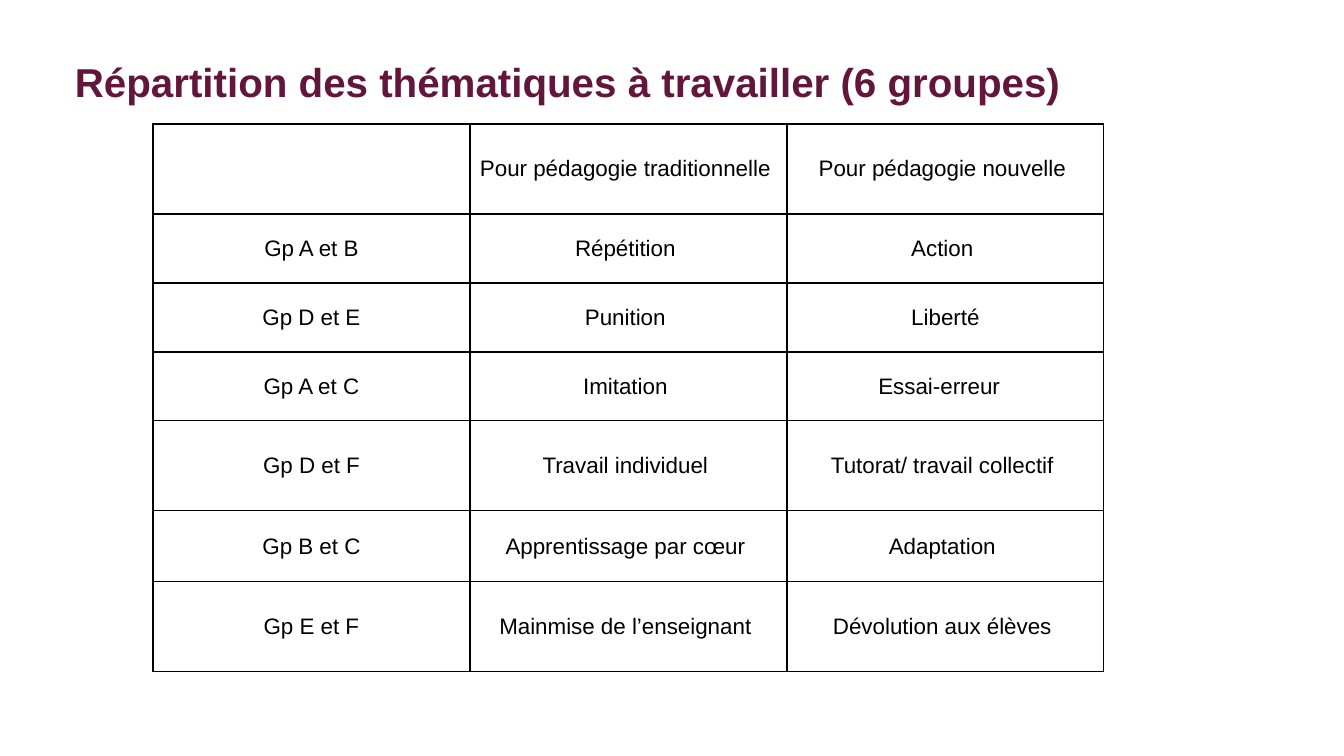
from lxml.etree import SubElement
from pptx import Presentation
from pptx.dml.color import RGBColor
from pptx.enum.text import MSO_ANCHOR, PP_ALIGN
from pptx.oxml.ns import qn
from pptx.util import Emu, Pt

# Content
TITLE = "Répartition des thématiques à travailler (6 groupes)"
ROWS = [
    ("", "Pour pédagogie traditionnelle ", "Pour pédagogie nouvelle "),
    ("Gp A et B", "Répétition ", "Action "),
    ("Gp D et E", "Punition ", " Liberté "),
    ("Gp A et C", "Imitation ", "Essai-erreur  "),
    ("Gp D et F", "Travail individuel ", "Tutorat/ travail collectif "),
    ("Gp B et C", "Apprentissage par cœur ", "Adaptation "),
    ("Gp E et F", "Mainmise de l’enseignant ", "Dévolution aux élèves "),
]
HEIGHTS = [90, 69, 69, 69, 90, 71, 90]
WIDTH = 317
INK, PLUM, WHITE = "000000", "63163C", "FFFFFF"


def px(n):
    return Emu(round(n * 914400 / 100.8))


def color(code):
    return RGBColor.from_string(code)


def style(para, size, code, bold=False):
    font = para.font
    font.name, font.size, font.bold = "Arial", Pt(size), bold
    font.color.rgb = color(code)


def border(cell):
    props = cell._tc.get_or_add_tcPr()
    for pos, side in enumerate(("lnL", "lnR", "lnT", "lnB")):
        line = SubElement(props, qn("a:" + side), w=str(Pt(1)))
        fill = SubElement(line, qn("a:solidFill"))
        SubElement(fill, qn("a:srgbClr"), val=INK)
        props.insert(pos, line)


deck = Presentation()
deck.slide_width, deck.slide_height = px(1344), px(756)
slide = deck.slides.add_slide(deck.slide_layouts[6])

# Title
frame = slide.shapes.add_textbox(px(65), px(45), px(1100), px(78)).text_frame
frame.word_wrap = True
frame.vertical_anchor = MSO_ANCHOR.MIDDLE
para = frame.paragraphs[0]
para.text = TITLE
para.line_spacing = 0.9
style(para, 28.8, PLUM, True)

# Table
table = slide.shapes.add_table(
    len(ROWS), len(ROWS[0]), px(153), px(124),
    px(WIDTH * len(ROWS[0])), px(sum(HEIGHTS))).table
table.first_row = table.horz_banding = False
for col in table.columns:
    col.width = px(WIDTH)
for row, high, texts in zip(table.rows, HEIGHTS, ROWS):
    row.height = px(high)
    for cell, text in zip(row.cells, texts):
        cell.fill.solid()
        cell.fill.fore_color.rgb = color(WHITE)
        border(cell)
        cell.vertical_anchor = MSO_ANCHOR.MIDDLE
        cell.margin_left = cell.margin_right = px(5)
        cell.margin_top = cell.margin_bottom = px(2)
        para = cell.text_frame.paragraphs[0]
        para.text = text
        para.alignment = PP_ALIGN.CENTER
        style(para, 16, INK)

deck.save("out.pptx")
